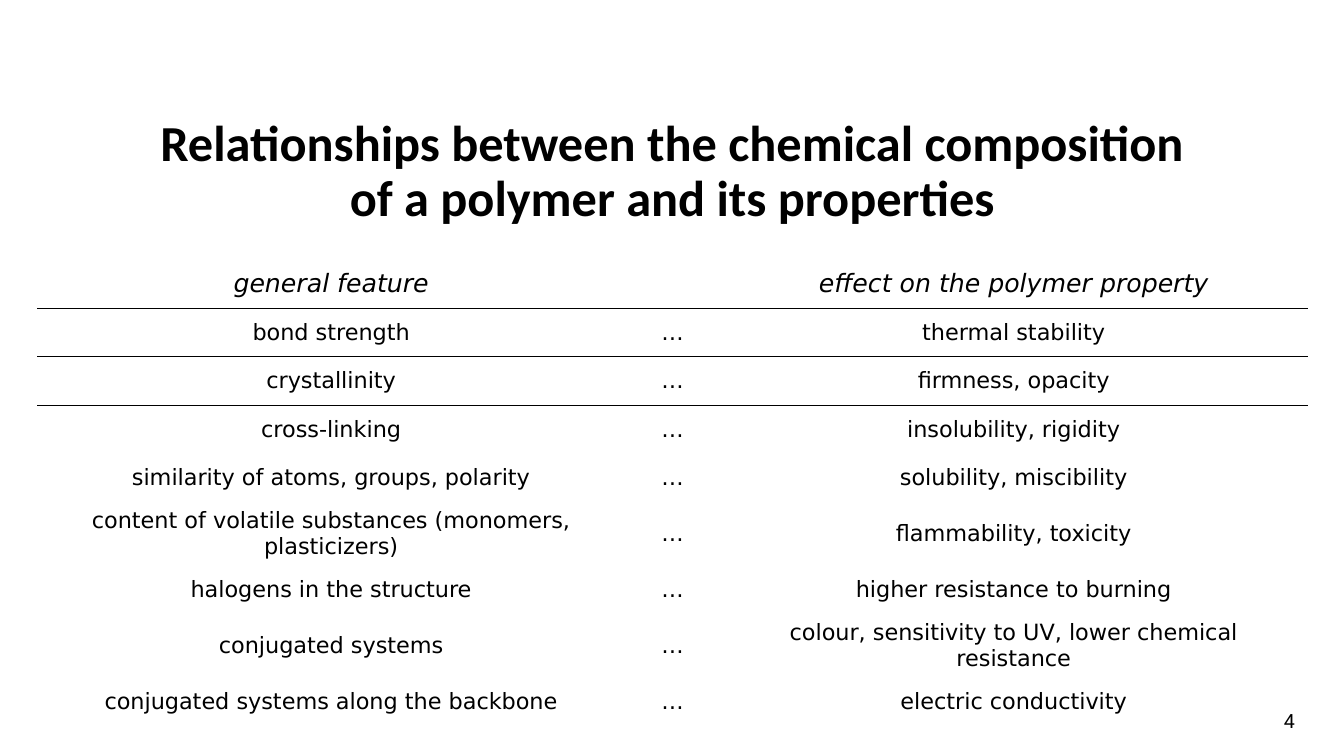
from lxml import etree
from pptx import Presentation
from pptx import util as u
from pptx.dml.color import RGBColor
from pptx.enum import text
from pptx.oxml.ns import qn

PLAIN = "{2D5ABB26-0587-4C30-8999-92F81FD0307C}"
ROWS = [
    ("general feature", "", "effect on the polymer property"),
    ("bond strength", "…", "thermal stability"),
    ("crystallinity", "…", "firmness, opacity"),
    ("cross-linking", "…", "insolubility, rigidity"),
    ("similarity of atoms, groups, polarity", "…", "solubility, miscibility"),
    ("content of volatile substances (monomers, plasticizers)", "…", "flammability, toxicity"),
    ("halogens in the structure", "…", "higher resistance to burning"),
    ("conjugated systems", "…", "colour, sensitivity to UV, lower chemical resistance"),
    ("conjugated systems along the backbone", "…", "electric conductivity"),
]
RULES = {0: 1, 1: 0.5}


def color(code):
    return RGBColor.from_string(code)


class Deck:
    ink = "000000"
    head = "Calibri"
    body = "DejaVu Sans"
    small = "Roboto"

    def __init__(self):
        self.prs = Presentation()
        self.prs.slide_width = u.Inches(13.33)
        self.prs.slide_height = u.Inches(7.5)
        self.slide = self.prs.slides.add_slide(self.prs.slide_layouts[5])

    def style(self, para, face, size, bold=False, italic=False):
        para.alignment = text.PP_ALIGN.CENTER
        font = para.font
        font.name, font.size = face, u.Pt(size)
        font.bold, font.italic = bold, italic
        font.color.rgb = color(self.ink)

    def title(self, words, box):
        shape = self.slide.shapes.title
        shape.left, shape.top, shape.width, shape.height = map(u.Inches, box)
        frame = shape.text_frame
        frame.text = words
        frame.auto_size = text.MSO_AUTO_SIZE.NONE
        frame.vertical_anchor = text.MSO_ANCHOR.MIDDLE
        para = frame.paragraphs[0]
        self.style(para, self.head, 36, bold=True)
        para.line_spacing = 0.9

    def label(self, words, box):
        frame = self.slide.shapes.add_textbox(*map(u.Inches, box)).text_frame
        frame.word_wrap = True
        frame.vertical_anchor = text.MSO_ANCHOR.MIDDLE
        frame.text = words
        self.style(frame.paragraphs[0], self.small, 14)

    def border(self, cell, side, width):
        line = etree.Element(qn("a:" + side), w=str(u.Pt(width)))
        fill = etree.SubElement(line, qn("a:solidFill"))
        etree.SubElement(fill, qn("a:srgbClr"), val=self.ink)
        cell._tc.get_or_add_tcPr().insert(0, line)

    def table(self, rows, left, top, widths, height, rules):
        box = map(u.Inches, (left, top, sum(widths), height * len(rows)))
        frame = self.slide.shapes.add_table(len(rows), len(widths), *box)
        grid = frame.table
        grid.first_row = grid.horz_banding = False
        grid._tbl.tblPr.find(qn("a:tableStyleId")).text = PLAIN
        for col, width in zip(grid.columns, widths):
            col.width = u.Inches(width)
        for r, row in enumerate(rows):
            grid.rows[r].height = u.Inches(height)
            for c, words in enumerate(row):
                cell = grid.cell(r, c)
                cell.text = words
                cell.vertical_anchor = text.MSO_ANCHOR.MIDDLE
                cell.fill.background()
                self.style(cell.text_frame.paragraphs[0], self.body,
                           16 if r else 18, italic=r == 0)
                if r in rules:
                    self.border(cell, "lnB", rules[r])
                if r - 1 in rules:
                    self.border(cell, "lnT", rules[r - 1])


def main():
    deck = Deck()
    deck.label("4", (12.51, 6.95, 0.56, 0.4))
    deck.title("Relationships between the chemical composition\v"
               "of a polymer and its properties", (0.92, 0.99, 11.5, 1.45))
    deck.table(ROWS, 0.37, 2.58, (5.83, 0.94, 5.83), 0.48, RULES)
    deck.prs.save("out.pptx")


if __name__ == "__main__":
    main()
